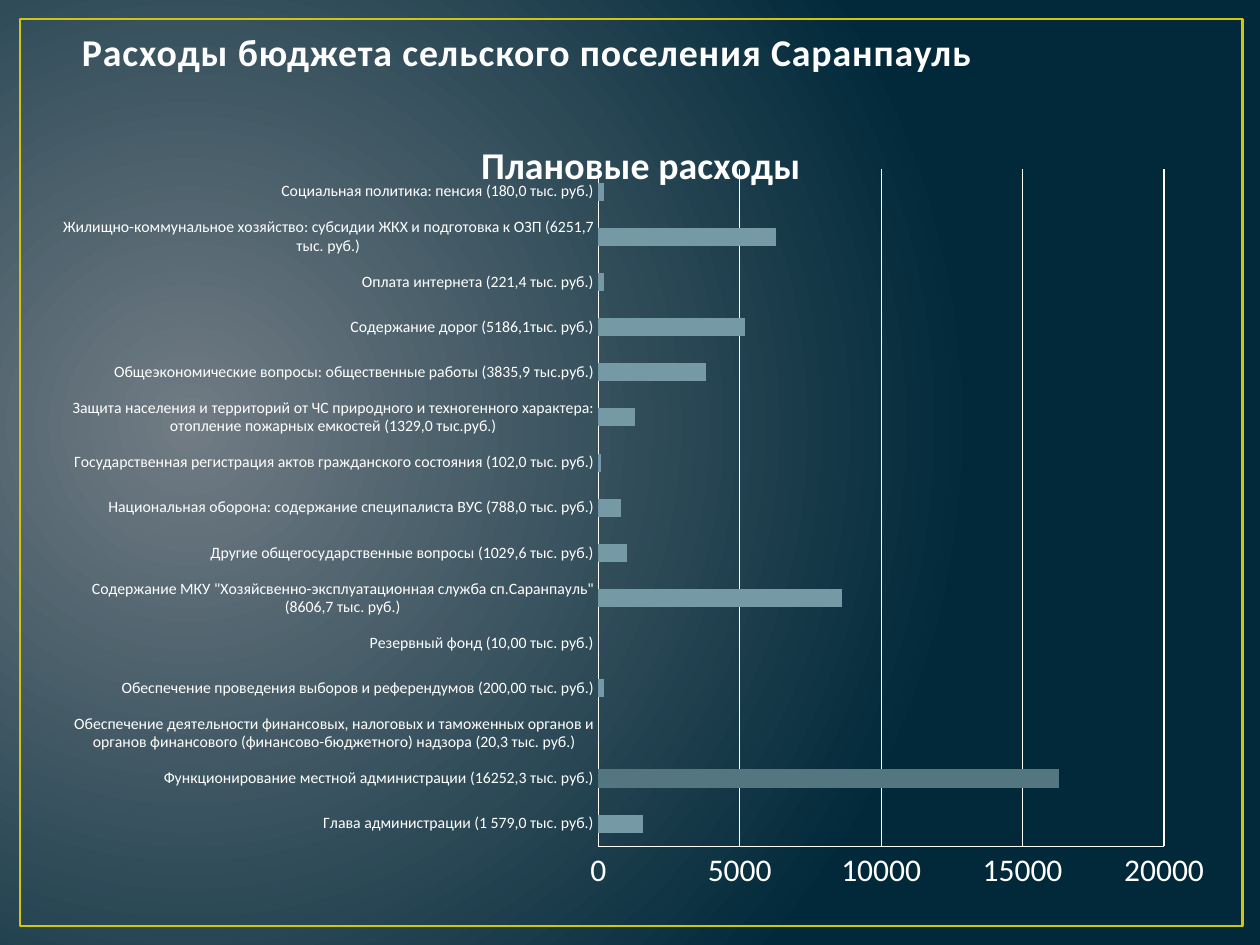
"""Build a slide with a bar chart of planned budget spending."""
from dataclasses import dataclass

from lxml import etree
from pptx import Presentation
from pptx.chart.data import CategoryChartData
from pptx.dml.color import RGBColor
from pptx.enum.chart import XL_CHART_TYPE, XL_TICK_MARK
from pptx.enum.shapes import MSO_SHAPE
from pptx.enum.text import MSO_ANCHOR, MSO_AUTO_SIZE, PP_ALIGN
from pptx.oxml import parse_xml
from pptx.oxml.ns import nsdecls, qn
from pptx.util import Inches, Pt

BAR = XL_CHART_TYPE.BAR_CLUSTERED
NO_TICK = XL_TICK_MARK.NONE
RECT = MSO_SHAPE.RECTANGLE
BOTTOM = MSO_ANCHOR.BOTTOM
NO_FIT = MSO_AUTO_SIZE.NONE
LEFT = PP_ALIGN.LEFT


@dataclass(frozen=True)
class Theme:
    font: str = "Calibri"
    glow: str = "717C84"
    night: str = "01293A"
    frame: str = "CFC60D"
    title: str = "FEFEFE"
    text: str = "FFFFFF"
    bar: str = "759AA5"
    peak: str = "537680"
    head: float = 21.6
    body: float = 18
    small: float = 9


THEME = Theme()


@dataclass(frozen=True)
class Cost:
    name: str
    value: int
    color: str = THEME.bar


HEAD = "Расходы бюджета сельского поселения Саранпауль"
PLAN = "Плановые расходы"
COSTS = [
    Cost("Глава администрации (1 579,0 тыс. руб.)", 1600),
    Cost("Функционирование местной администрации (16252,3 тыс. руб.)", 16300, THEME.peak),
    Cost("Обеспечение деятельности финансовых, налоговых и таможенных органов и органов "
         "финансового (финансово-бюджетного) надзора (20,3 тыс. руб.)", 0),
    Cost("Обеспечение проведения выборов и референдумов (200,00 тыс. руб.)", 200),
    Cost("Резервный фонд (10,00 тыс. руб.)", 0),
    Cost('Содержание МКУ "Хозяйсвенно-эксплуатационная служба сп.Саранпауль" '
         "(8606,7 тыс. руб.)", 8600),
    Cost("Другие общегосударственные вопросы (1029,6 тыс. руб.)", 1000),
    Cost("Национальная оборона: содержание специпалиста ВУС (788,0 тыс. руб.)", 800),
    Cost("Государственная регистрация актов гражданского состояния (102,0 тыс. руб.)", 100),
    Cost("Защита населения и территорий от ЧС природного и техногенного характера: "
         "отопление пожарных емкостей (1329,0 тыс.руб.)", 1300),
    Cost("Общеэкономические вопросы: общественные работы (3835,9 тыс.руб.)", 3800),
    Cost("Содержание дорог (5186,1тыс. руб.)", 5200),
    Cost("Оплата интернета (221,4 тыс. руб.)", 200),
    Cost("Жилищно-коммунальное хозяйство: субсидии ЖКХ и подготовка к ОЗП "
         "(6251,7 тыс. руб.)", 6300),
    Cost("Социальная политика: пенсия (180,0 тыс. руб.)", 200),
]


def rgb(color: str) -> RGBColor:
    return RGBColor.from_string(color)


def style(font, *, size: float, color: str = THEME.text, bold: bool = False) -> None:
    font.name, font.size, font.bold = THEME.font, Pt(size), bold
    font.color.rgb = rgb(color)


def write(frame, text: str, *, space: float = 0, **form) -> None:
    part = frame.paragraphs[0]
    part.alignment = LEFT
    run = part.add_run()
    run.text = text
    style(run.font, **form)
    if space:
        run.font._element.set("spc", str(round(space * 100)))


def paint(slide) -> None:
    fill = slide.background.fill
    fill.gradient()
    for stop, color in zip(fill.gradient_stops, (THEME.glow, THEME.night)):
        stop.color.rgb = rgb(color)
    grad = slide.element.find(".//" + qn("a:gradFill"))
    grad.replace(grad.find(qn("a:lin")), parse_xml(
        f'<a:path {nsdecls("a")} path="circle">'
        '<a:fillToRect l="15000" t="50000" r="85000" b="60000"/></a:path>'))


def border(slide) -> None:
    box = slide.shapes.add_shape(RECT, Inches(0.16), Inches(0.15), Inches(9.7), Inches(7.2))
    box.shadow.inherit = False
    box.fill.background()
    box.line.color.rgb = rgb(THEME.frame)
    box.line.width = Pt(1.5)


def heading(slide) -> None:
    title = slide.shapes.title
    title.left, title.top = Inches(0.55), Inches(0.16)
    title.width, title.height = Inches(9), Inches(0.48)
    frame = title.text_frame
    frame.auto_size, frame.word_wrap = NO_FIT, True
    frame.vertical_anchor = BOTTOM
    write(frame, HEAD, size=THEME.head, color=THEME.title, bold=True, space=0.5)


def place(chart, **spots: float) -> None:
    area = chart._chartSpace.find(".//" + qn("c:plotArea"))
    for old in area.findall(qn("c:layout")):
        area.remove(old)
    layout = etree.Element(qn("c:layout"))
    manual = etree.SubElement(layout, qn("c:manualLayout"))
    modes = {"layoutTarget": "inner", "xMode": "edge", "yMode": "edge"}
    for key, value in {**modes, **spots}.items():
        etree.SubElement(manual, qn(f"c:{key}")).set("val", str(value))
    area.insert(0, layout)


def graph(slide) -> None:
    data = CategoryChartData()
    data.categories = [cost.name for cost in COSTS]
    data.add_series(PLAN, [cost.value for cost in COSTS])
    chart = slide.shapes.add_chart(
        BAR, Inches(0.5), Inches(0.86), Inches(9.17), Inches(6.43), data).chart
    chart.has_legend = False
    style(chart.font, size=THEME.body)
    chart.has_title = True
    write(chart.chart_title.text_frame, PLAN, size=THEME.head, bold=True)
    chart.chart_title.include_in_layout = True
    place(chart, x=0.463, y=0.075, w=0.49, h=0.836)
    plot = chart.plots[0]
    plot.gap_width, plot.vary_by_categories = 150, False
    bars = plot.series[0]
    bars.format.fill.solid()
    bars.format.fill.fore_color.rgb = rgb(THEME.bar)
    for spot, cost in enumerate(COSTS):
        if cost.color != THEME.bar:
            fill = bars.points[spot].format.fill
            fill.solid()
            fill.fore_color.rgb = rgb(cost.color)
    for axis, size in ((chart.category_axis, THEME.small), (chart.value_axis, THEME.body)):
        axis.major_tick_mark = axis.minor_tick_mark = NO_TICK
        axis.format.line.color.rgb = rgb(THEME.text)
        style(axis.tick_labels.font, size=size)
    scale = chart.value_axis
    scale.minimum_scale, scale.maximum_scale, scale.major_unit = 0, 20000, 5000
    scale.has_major_gridlines = True
    scale.major_gridlines.format.line.color.rgb = rgb(THEME.text)


def main() -> None:
    deck = Presentation()
    deck.slide_width, deck.slide_height = Inches(10), Inches(7.5)
    slide = deck.slides.add_slide(deck.slide_layouts[5])
    paint(slide)
    border(slide)
    heading(slide)
    graph(slide)
    deck.save("out.pptx")


if __name__ == "__main__":
    main()
